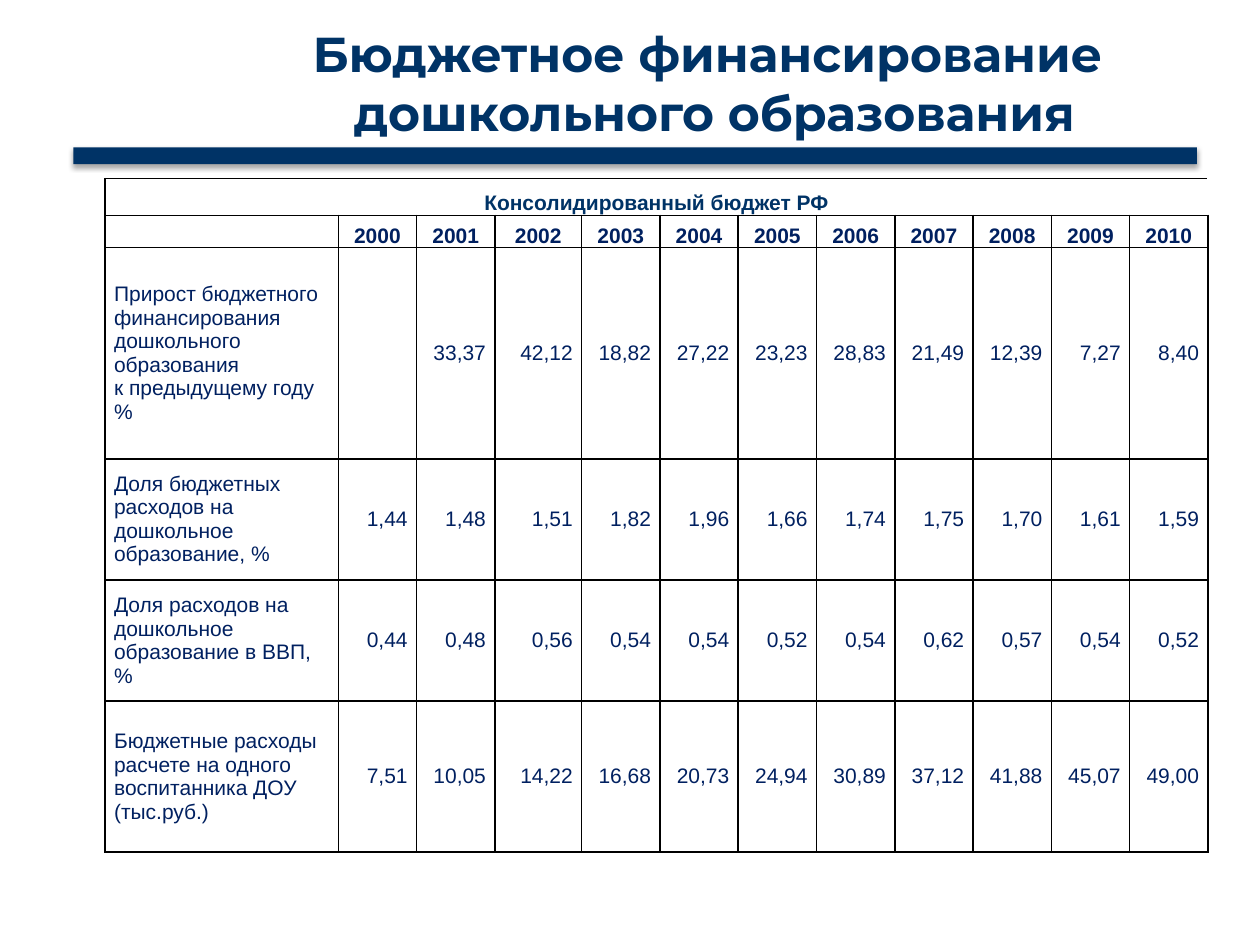
from lxml import etree
from pptx import Presentation
from pptx.dml.color import RGBColor
from pptx.enum.shapes import MSO_SHAPE
from pptx.enum.text import MSO_ANCHOR, PP_ALIGN
from pptx.oxml import parse_xml
from pptx.oxml.ns import nsdecls, qn
from pptx.util import Cm, Pt

RECTANGLE = MSO_SHAPE.RECTANGLE
LEFT, CENTER, RIGHT = PP_ALIGN.LEFT, PP_ALIGN.CENTER, PP_ALIGN.RIGHT
MIDDLE, BOTTOM = MSO_ANCHOR.MIDDLE, MSO_ANCHOR.BOTTOM

COLORS = {"heading": "003366", "text": "002060", "line": "000000"}
TITLE = "Бюджетное финансирование \vдошкольного образования"
CAPTION = "Консолидированный бюджет РФ"
YEARS = [str(year) for year in range(2000, 2011)]
INDICATORS = [
    ("Прирост бюджетного финансирования дошкольного образования\nк предыдущему году %",
     ["", "33,37", "42,12", "18,82", "27,22", "23,23", "28,83", "21,49", "12,39", "7,27", "8,40"]),
    ("Доля бюджетных расходов на дошкольное образование, %",
     ["1,44", "1,48", "1,51", "1,82", "1,96", "1,66", "1,74", "1,75", "1,70", "1,61", "1,59"]),
    ("Доля расходов на дошкольное образование в ВВП, %",
     ["0,44", "0,48", "0,56", "0,54", "0,54", "0,52", "0,54", "0,62", "0,57", "0,54", "0,52"]),
    ("Бюджетные расходы расчете на одного воспитанника ДОУ (тыс.руб.)",
     ["7,51", "10,05", "14,22", "16,68", "20,73", "24,94", "30,89", "37,12", "41,88", "45,07",
      "49,00"]),
]
ROW_HEIGHTS = [0.74, 0.65, 4.26, 2.44, 2.44, 3.05]
TABLE_WIDTH, LABEL_WIDTH, WIDE_YEAR_WIDTH = 22.23, 4.7, 1.75
WIDE_YEAR = "2002"


def write(frame, text, align, font_name, size, color, bold):
    frame.text = text
    for para in frame.paragraphs:
        para.alignment = align
        for span in para.runs:
            span.font.name = font_name
            span.font.size = Pt(size)
            span.font.bold = bold
            span.font.color.rgb = RGBColor.from_string(color)
        if not para.runs:
            # An empty cell needs a small end mark, or its row grows
            end_mark = etree.SubElement(para._p, qn("a:endParaRPr"))
            end_mark.set("sz", str(size * 100))


def draw_borders(cell, sides):
    for side in sides:
        cell._tc.get_or_add_tcPr().append(parse_xml(
            f'<a:ln{side} {nsdecls("a")} w="12700"><a:solidFill>'
            f'<a:srgbClr val="{COLORS["line"]}"/></a:solidFill></a:ln{side}>'))


def add_title(slide):
    box = slide.shapes.add_textbox(Cm(4.24), Cm(0.64), Cm(20.32), Cm(2.33))
    frame = box.text_frame
    frame.word_wrap = True
    frame.vertical_anchor = BOTTOM
    write(frame, TITLE, CENTER, "Montserrat", 28, COLORS["heading"], True)


def add_budget_table(slide):
    rows = [[CAPTION] + [""] * len(YEARS), [""] + YEARS]
    rows += [[label] + values for label, values in INDICATORS]
    year_width = (TABLE_WIDTH - LABEL_WIDTH - WIDE_YEAR_WIDTH) / (len(YEARS) - 1)
    widths = [LABEL_WIDTH] + [WIDE_YEAR_WIDTH if year == WIDE_YEAR else year_width
                              for year in YEARS]

    table = slide.shapes.add_table(len(rows), len(widths), Cm(2.12), Cm(3.6),
                                   Cm(TABLE_WIDTH), Cm(sum(ROW_HEIGHTS))).table
    table.first_row = table.horz_banding = False
    for column, width in zip(table.columns, widths):
        column.width = Cm(width)
    for row, height in zip(table.rows, ROW_HEIGHTS):
        row.height = Cm(height)

    for row_index, texts in enumerate(rows):
        is_header = row_index < 2
        for column_index, text in enumerate(texts):
            cell = table.cell(row_index, column_index)
            cell.margin_left = cell.margin_right = Cm(0.18)
            cell.margin_top = cell.margin_bottom = 0
            cell.vertical_anchor = BOTTOM if is_header else MIDDLE
            align = CENTER if is_header else RIGHT if column_index else LEFT
            color = COLORS["text"] if row_index else COLORS["heading"]
            write(cell.text_frame, text, align, "Arial", 12, color, is_header)
            if row_index:
                draw_borders(cell, "LRTB")
            else:
                draw_borders(cell, "TB" if column_index else "LTB")
            cell.fill.background()
    table.cell(0, 0).merge(table.cell(0, len(YEARS)))


def add_title_bar(slide):
    bar = slide.shapes.add_shape(RECTANGLE, Cm(1.48), Cm(2.97), Cm(22.65), Cm(0.34))
    bar.fill.solid()
    bar.fill.fore_color.rgb = RGBColor.from_string(COLORS["heading"])
    bar.line.fill.background()
    bar._element.spPr.append(parse_xml(
        f'<a:effectLst {nsdecls("a")}><a:outerShdw blurRad="{Pt(3.1)}" dist="{Pt(1.8)}" '
        f'dir="5400000" rotWithShape="0"><a:srgbClr val="{COLORS["line"]}">'
        '<a:alpha val="35000"/></a:srgbClr></a:outerShdw></a:effectLst>'))


def main():
    deck = Presentation()
    deck.slide_width, deck.slide_height = Cm(25.4), Cm(19.05)
    slide = deck.slides.add_slide(deck.slide_layouts[6])
    add_title(slide)
    add_budget_table(slide)
    add_title_bar(slide)
    deck.save("out.pptx")


if __name__ == "__main__":
    main()
